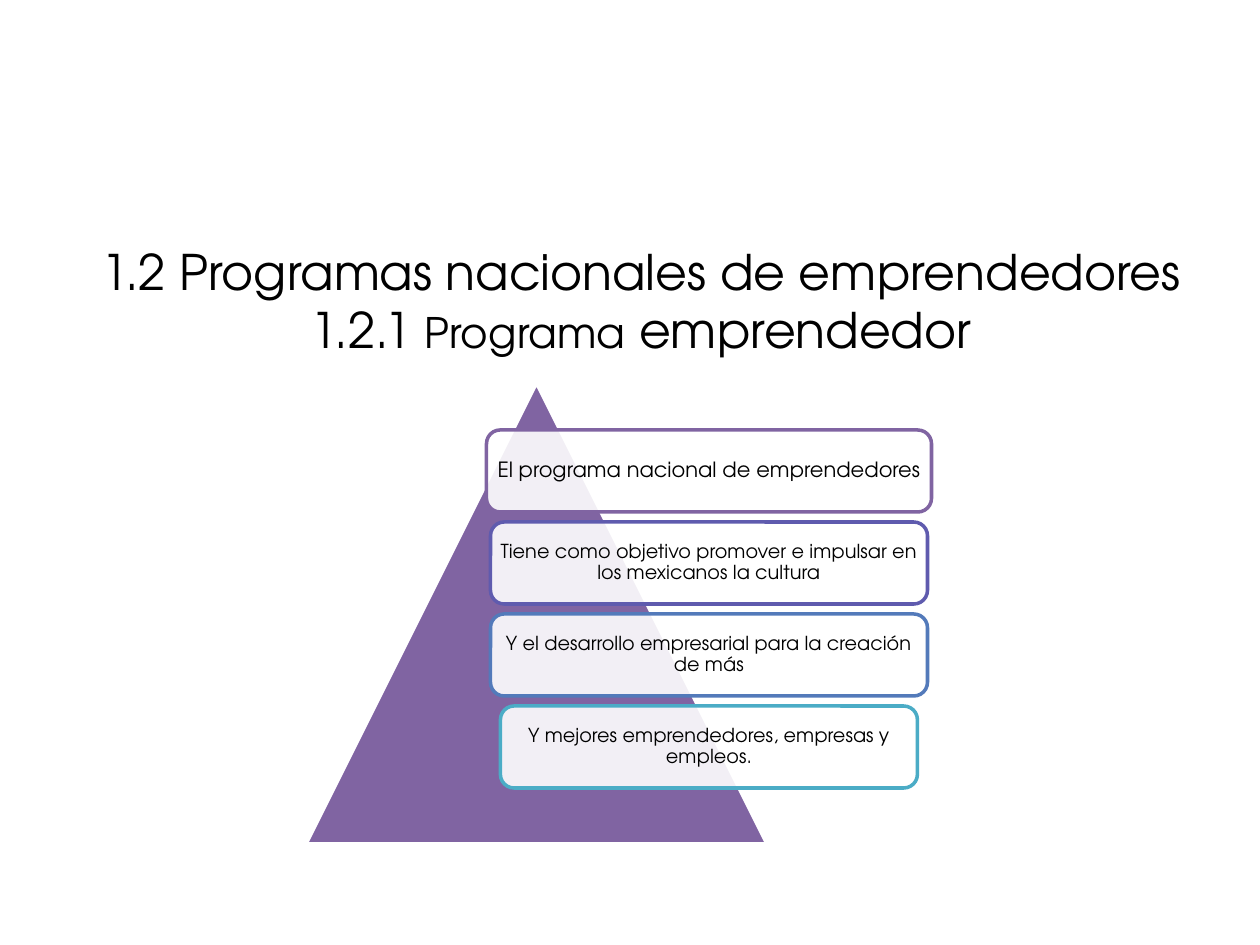
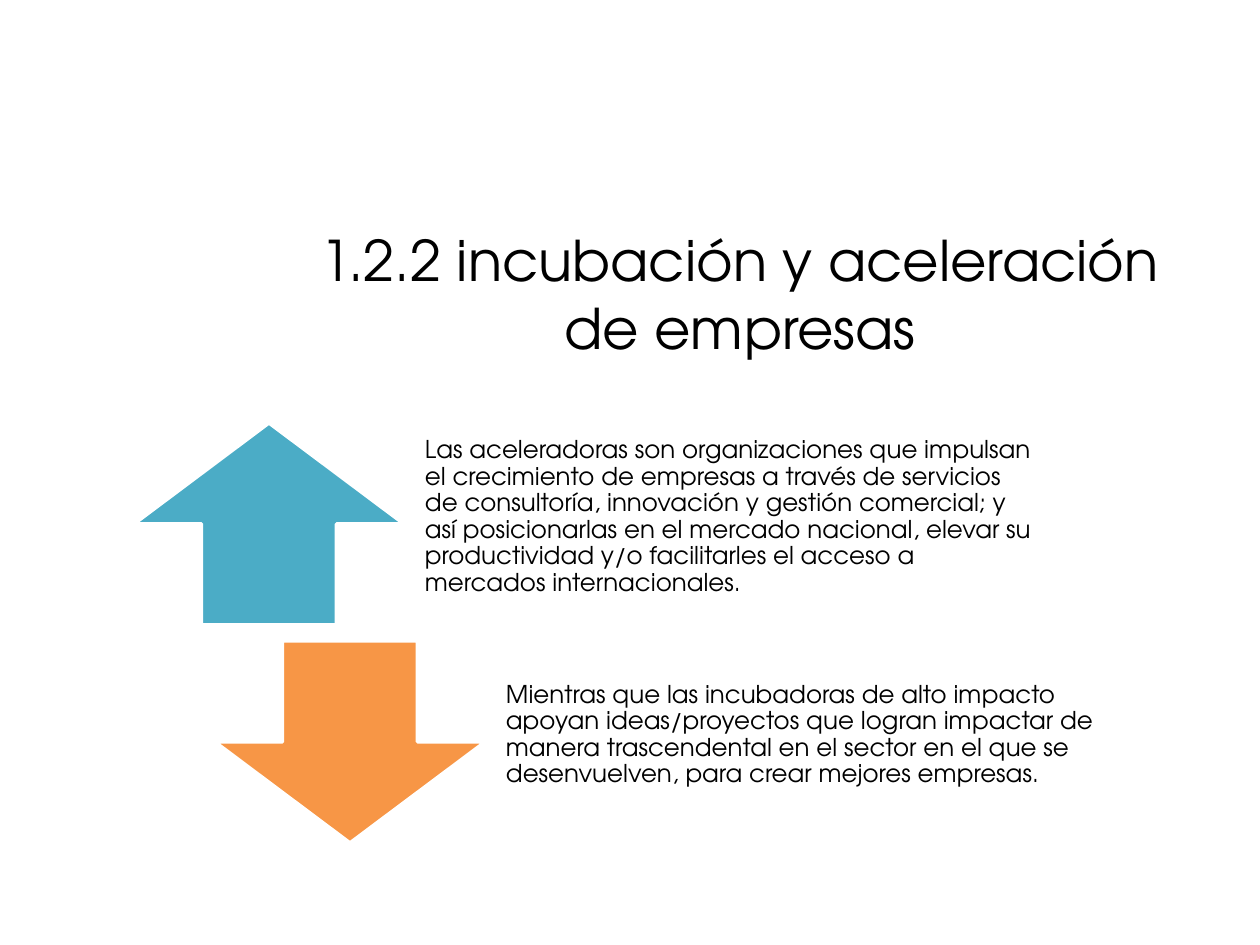
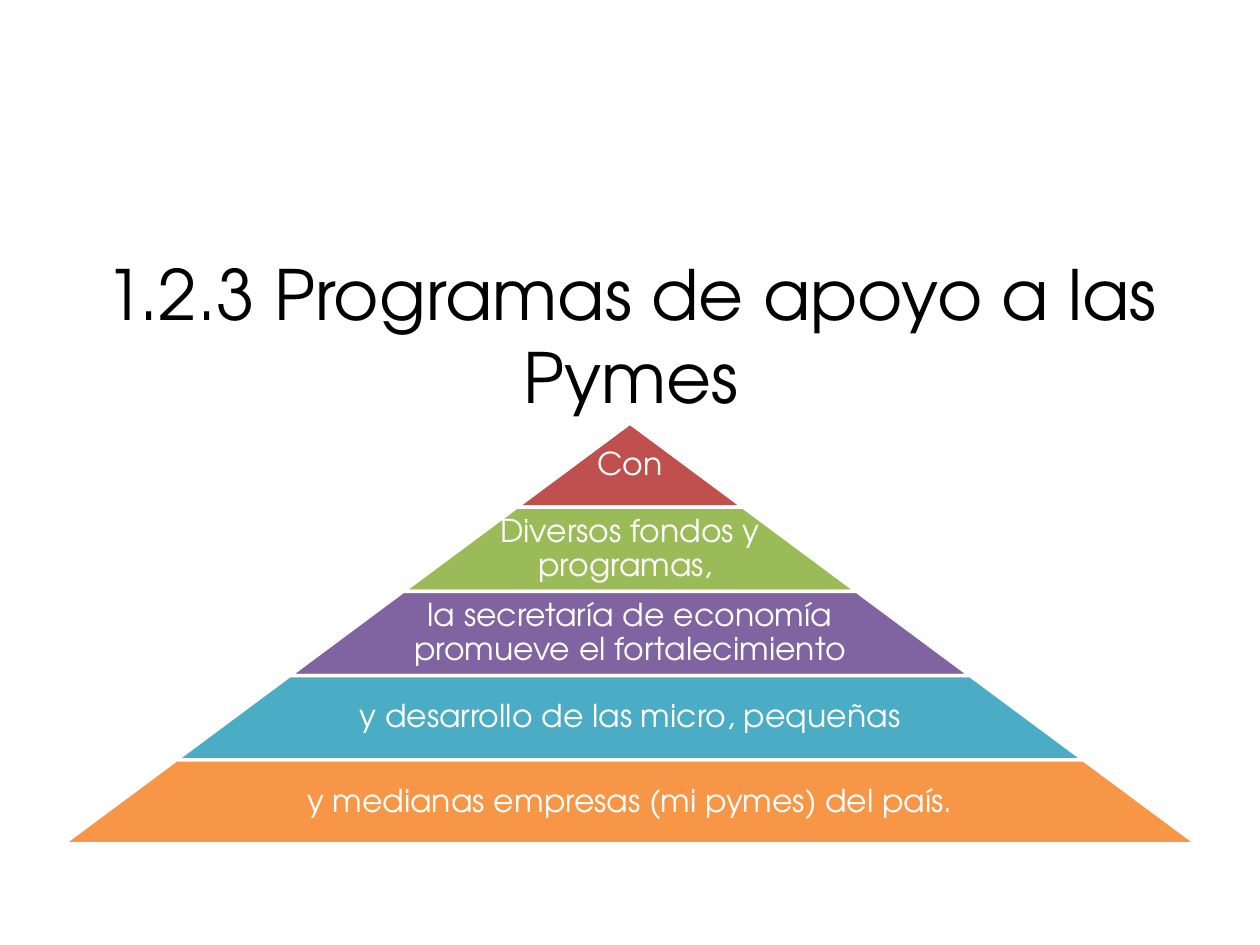
from lxml import etree
from pptx import Presentation
from pptx.dml.color import RGBColor
from pptx.enum import shapes, text
from pptx.oxml.ns import qn
from pptx.util import Emu, Pt

FONT = "TeX Gyre Adventor"
BLACK = RGBColor(0x00, 0x00, 0x00)
WHITE = RGBColor(0xFF, 0xFF, 0xFF)
PURPLE = RGBColor(0x80, 0x64, 0xA2)
INDIGO = RGBColor(0x5F, 0x5B, 0xAE)
BLUE = RGBColor(0x53, 0x7A, 0xBA)
TEAL = RGBColor(0x4B, 0xAC, 0xC6)
ORANGE = RGBColor(0xF7, 0x96, 0x46)
RED = RGBColor(0xC0, 0x50, 0x4D)
GREEN = RGBColor(0x9B, 0xBB, 0x59)

KIND = shapes.MSO_SHAPE
ALIGN = text.PP_ALIGN
PX = 914400 / 126


def px(n):
    return Emu(round(n * PX))


def place(box):
    return [px(n) for n in box]


def draw(slide, kind, box, fill, line=WHITE):
    shape = slide.shapes.add_shape(kind, *place(box))
    shape.shadow.inherit = False
    shape.fill.solid()
    shape.fill.fore_color.rgb = fill
    shape.line.color.rgb = line
    shape.line.width = Pt(2)
    return shape


def fade(shape, share):
    color = shape.element.spPr.find(qn("a:solidFill"))[0]
    etree.SubElement(color, qn("a:alpha")).set("val", str(share * 1000))


def label(slide, box, size, pads, color=BLACK, align=ALIGN.CENTER, space=0.9):
    frame = slide.shapes.add_textbox(*place(box)).text_frame
    frame.word_wrap = True
    frame.vertical_anchor = text.MSO_ANCHOR.MIDDLE
    (frame.margin_left, frame.margin_top,
     frame.margin_right, frame.margin_bottom) = place(pads)
    para = frame.paragraphs[0]
    para.alignment = align
    para.line_spacing = space
    para.font.name = FONT
    para.font.size = Pt(size)
    para.font.color.rgb = color
    return para


def title(slide, box, size, foot=6):
    return label(slide, box, size, (13, 6, 13, foot), space=1.0)


def cards(slide, box, items):
    left, top, width, height = box
    draw(slide, KIND.ISOSCELES_TRIANGLE, box, PURPLE)
    mid = left + 403
    high, step, pad = 82, 92, 4
    for i, (words, size, wide, color) in enumerate(items):
        x, y = mid - wide / 2, top + 47 + i * step
        card = draw(slide, KIND.ROUNDED_RECTANGLE, (x, y, wide, high), WHITE, color)
        fade(card, 90)
        inner = (x + pad, y + pad, wide - 2 * pad, high - 2 * pad)
        label(slide, inner, size, (6, 6, 6, 6)).text = words


def arrows(slide, box, items):
    left, top, width, height = box
    for i, (kind, color, words) in enumerate(items):
        x, y = left + i * 81, top + i * 218
        draw(slide, kind, (x, y, 270, 202), color)
        note = (x + 277, y, 635, 202)
        label(slide, note, 14, (14, 0, 14, 14), align=ALIGN.LEFT).text = words


def pyramid(slide, box, items):
    left, top, width, height = box
    high, step = height / len(items), width / len(items)
    mid = left + width / 2
    for i, (words, color) in enumerate(items):
        wide, y = step * (i + 1), top + i * high
        tier = draw(slide, KIND.TRAPEZOID, (mid - wide / 2, y, wide, high), color)
        tier.adjustments[0] = step / 2 / high
        room = wide * 0.65 if i else wide
        inner = (mid - room / 2, y, room, high)
        label(slide, inner, 18, (4, 4, 4, 4), WHITE).text = words


def programs(slide):
    para = title(slide, (74, 255, 1134, 149), 28, foot=65)
    para.add_run().text = "1.2 Programas nacionales de emprendedores"
    para.add_line_break()
    para.add_run().text = "1.2.1 "
    small = para.add_run()
    small.text = "Programa"
    small.font.size = Pt(24)
    para.add_run().text = " emprendedor"
    cards(slide, (306, 383, 461, 461), [
        ("El programa nacional de emprendedores", 12, 445, PURPLE),
        ("Tiene como objetivo promover e impulsar en los mexicanos la cultura",
         11, 437, INDIGO),
        ("Y el desarrollo empresarial para la creación de más", 11, 437, BLUE),
        ("Y mejores emprendedores, empresas y empleos.", 11, 417, TEAL),
    ])


def growth(slide):
    title(slide, (282, 214, 916, 158), 32).text = (
        "1.2.2 incubación y aceleración de empresas")
    arrows(slide, (134, 423, 993, 420), [
        (KIND.UP_ARROW, TEAL,
         "Las aceleradoras son organizaciones que impulsan el crecimiento de "
         "empresas a través de servicios de consultoría, innovación y gestión "
         "comercial; y así posicionarlas en el mercado nacional, elevar su "
         "productividad y/o facilitarles el acceso a mercados internacionales."),
        (KIND.DOWN_ARROW, ORANGE,
         "Mientras que las incubadoras de alto impacto apoyan ideas/proyectos "
         "que logran impactar de manera trascendental en el sector en el que se "
         "desenvuelven, para crear mejores empresas."),
    ])


def support(slide):
    title(slide, (64, 255, 1134, 158), 39.6).text = (
        "1.2.3 Programas de apoyo a las Pymes")
    pyramid(slide, (63, 423, 1134, 421), [
        ("Con", RED),
        ("Diversos fondos y programas, ", GREEN),
        ("la secretaría de economía promueve el fortalecimiento", PURPLE),
        ("y desarrollo de las micro, pequeñas", TEAL),
        ("y medianas empresas (mi pymes) del país.", ORANGE),
    ])


def main():
    deck = Presentation()
    deck.slide_width, deck.slide_height = px(1260), px(945)
    for build in (programs, growth, support):
        build(deck.slides.add_slide(deck.slide_layouts[6]))
    deck.save("out.pptx")


if __name__ == "__main__":
    main()
